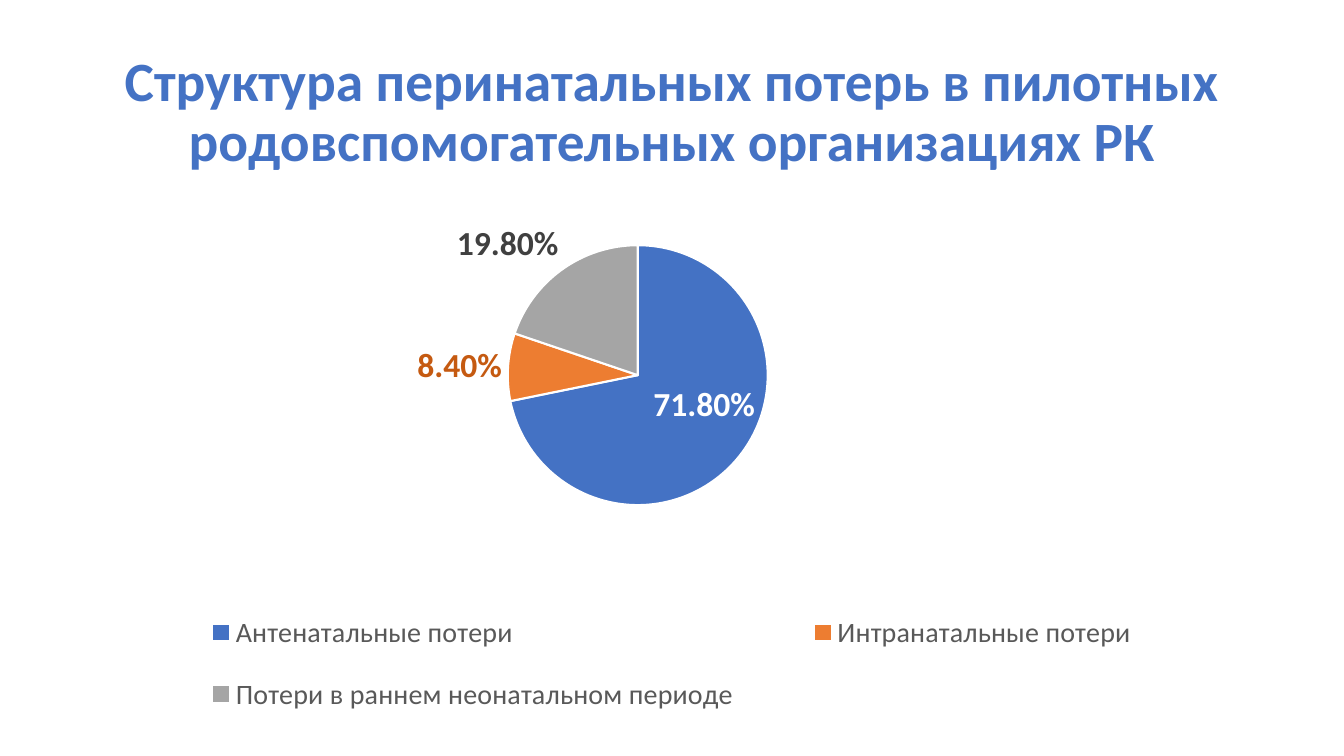
from lxml.etree import SubElement as Sub
from pptx import Presentation
from pptx.chart.data import CategoryChartData as Data
from pptx.dml.color import RGBColor as Color
from pptx.enum.chart import XL_CHART_TYPE as Kind
from pptx.enum.chart import XL_LABEL_POSITION as Spot
from pptx.enum.chart import XL_LEGEND_POSITION as Side
from pptx.enum.text import MSO_ANCHOR as Anchor
from pptx.enum.text import PP_ALIGN as Align
from pptx.oxml.ns import qn
from pptx.util import Pt

FACE = "Calibri"
HUES = {
    "blue": "4472C4", "orange": "ED7D31", "gray": "A5A5A5",
    "rust": "C55A11", "dark": "404040", "mid": "595959",
    "white": "FFFFFF", "black": "000000",
}
TITLE = "Структура перинатальных потерь в пилотных родовспомогательных организациях РК"
# Name, share, slice colour, label colour, label spot
LOSSES = [
    ("Антенатальные потери", 0.718, "blue", "white", Spot.CENTER),
    ("Интранатальные потери", 0.084, "orange", "rust", Spot.OUTSIDE_END),
    ("Потери в раннем неонатальном периоде", 0.198, "gray", "dark", Spot.OUTSIDE_END),
]


def hue(name):
    return Color.from_string(HUES[name])


def style(font, size, color, bold=False):
    font.name, font.size, font.bold = FACE, Pt(size), bold
    font.color.rgb = hue(color)


def write(shape, text, size=18, color="black", bold=False, align=Align.LEFT):
    frame = shape.text_frame
    frame.word_wrap, frame.vertical_anchor = True, Anchor.MIDDLE
    para = frame.paragraphs[0]
    para.alignment, para.line_spacing = align, 0.9
    run = para.add_run()
    run.text = text
    style(run.font, size, color, bold)


def place(node, after, **vals):
    """Put a manual layout into a chart part, after the given child."""
    for old in node.findall(qn("c:layout")):
        node.remove(old)
    box = Sub(node, qn("c:layout"))
    if after is None:
        node.insert(0, box)
    else:
        after.addnext(box)
    man = Sub(box, qn("c:manualLayout"))
    for key, val in vals.items():
        Sub(man, qn("c:" + key)).set("val", str(val))


def add_pie(slide, left, top, width, height):
    data = Data(number_format="0.00%")
    data.categories = [loss[0] for loss in LOSSES]
    data.add_series("Series 1", [loss[1] for loss in LOSSES])
    chart = slide.shapes.add_chart(
        Kind.PIE, Pt(left), Pt(top), Pt(width), Pt(height), data).chart
    style(chart.font, 10, "black")
    chart.has_title = False
    plot = chart.plots[0]
    plot.vary_by_categories = True
    place(chart.plots[0]._element.getparent(), None, layoutTarget="inner",
          xMode="edge", yMode="edge", x=0.166, y=0.081, w=0.609, h=0.483)

    # Shared label format
    plot.has_data_labels = True
    tags = plot.series[0].data_labels
    tags.show_value, tags.show_percentage = True, False
    tags.number_format, tags.number_format_is_linked = "0.00%", False
    style(tags.font, 24, "dark", True)

    # Slices and their labels
    for num, (_, _, fill, ink, spot) in enumerate(LOSSES):
        point = plot.series[0].points[num]
        point.format.fill.solid()
        point.format.fill.fore_color.rgb = hue(fill)
        point.format.line.width = Pt(1.5)
        point.format.line.color.rgb = hue("white")
        style(point.data_label.font, 24, ink, True)
        point.data_label.position = spot
    first = tags._element.find(qn("c:dLbl"))
    place(first, first.find(qn("c:idx")), x=0.014, y=-0.02)

    # Legend
    chart.has_legend = True
    key = chart.legend
    key.position, key.include_in_layout = Side.BOTTOM, False
    style(key.font, 20, "mid")
    place(key._element, key._element.find(qn("c:legendPos")),
          xMode="edge", yMode="edge", x=0.042, y=0.718, w=0.916, h=0.28)


def main():
    deck = Presentation()
    deck.slide_width, deck.slide_height = Pt(960), Pt(540)
    slide = deck.slides.add_slide(deck.slide_layouts[5])

    # Title
    head = slide.shapes.title
    head.left, head.top, head.width, head.height = Pt(66), Pt(28.8), Pt(828), Pt(104.4)
    write(head, TITLE, size=39.6, color="blue", bold=True, align=Align.CENTER)

    # Chart
    add_pie(slide, 66, 144, 828, 384.5)
    deck.save("out.pptx")


if __name__ == "__main__":
    main()
